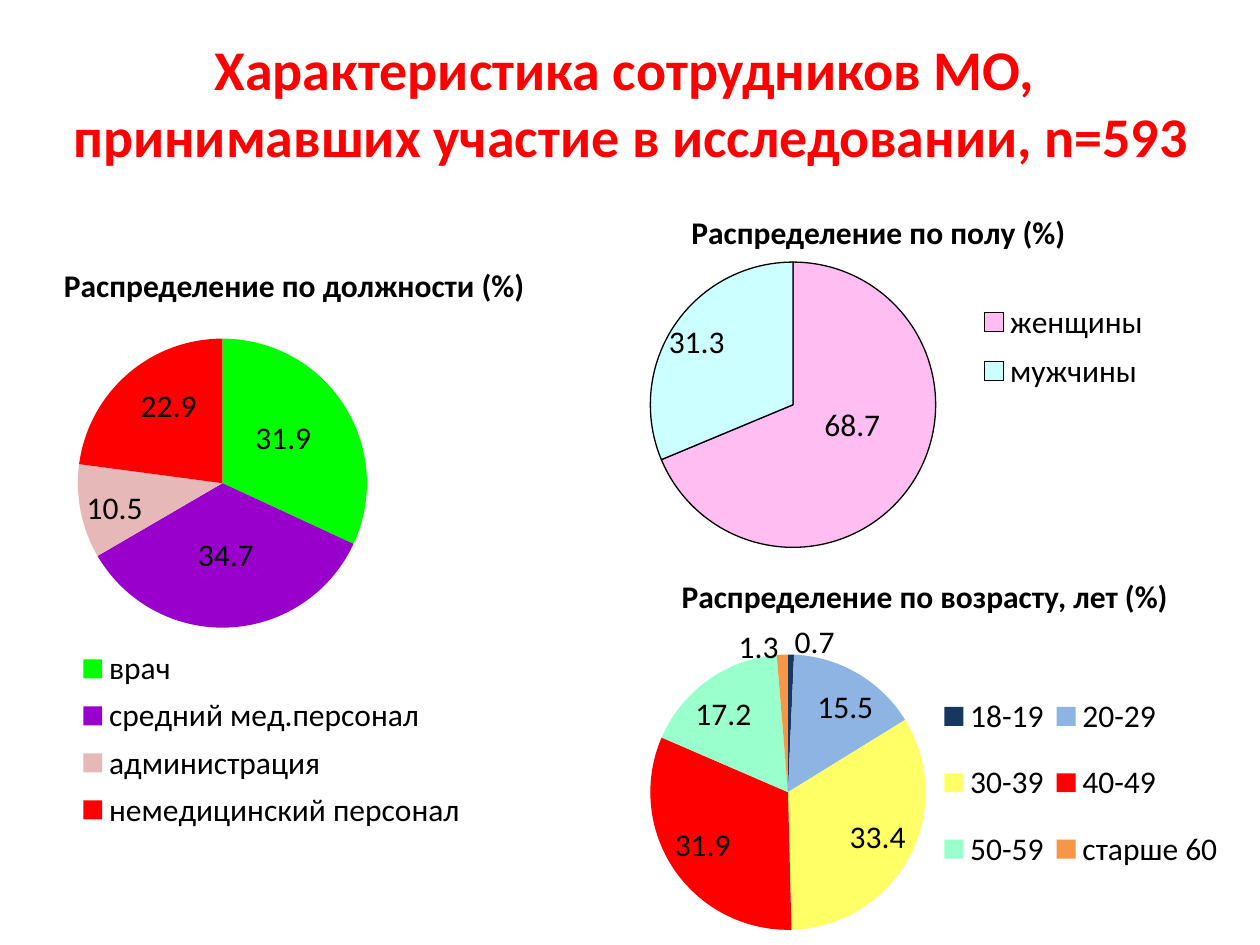
from lxml import etree
from pptx import Presentation
from pptx.chart.data import CategoryChartData
from pptx.dml.color import RGBColor
from pptx.enum import chart as ch, text
from pptx.util import Cm, Pt

FONT = "Calibri"
NS = "http://schemas.openxmlformats.org/drawingml/2006/chart"
BLACK = RGBColor(0x00, 0x00, 0x00)
RED = RGBColor(0xFF, 0x00, 0x00)
GREEN = RGBColor(0x00, 0xFF, 0x00)
PURPLE = RGBColor(0x99, 0x00, 0xCC)
ROSE = RGBColor(0xE6, 0xB9, 0xB8)
PINK = RGBColor(0xFF, 0xBD, 0xF2)
CYAN = RGBColor(0xCC, 0xFF, 0xFF)
NAVY = RGBColor(0x17, 0x37, 0x5E)
BLUE = RGBColor(0x8E, 0xB4, 0xE3)
YELLOW = RGBColor(0xFF, 0xFF, 0x66)
MINT = RGBColor(0x99, 0xFF, 0xCC)
ORANGE = RGBColor(0xF7, 0x96, 0x46)

prs = Presentation()
prs.slide_width, prs.slide_height = Cm(25.4), Cm(19.05)
s = prs.slides.add_slide(prs.slide_layouts[6])


def add_text(words, box, size=18, color=BLACK, wrap=True,
             align=text.PP_ALIGN.LEFT, anchor=text.MSO_ANCHOR.TOP):
    tf = s.shapes.add_textbox(*[Cm(v) for v in box]).text_frame
    tf.word_wrap = wrap
    tf.vertical_anchor = anchor
    p = tf.paragraphs[0]
    p.alignment = align
    for i, line in enumerate(words.split("\n")):
        if i:
            p.add_line_break()
        r = p.add_run()
        r.text = line
        r.font.name, r.font.size, r.font.bold = FONT, Pt(size), True
        r.font.color.rgb = color


def make_layout(**values):
    """Manual chart layout; values are fractions of the chart frame."""
    layout = etree.Element(f"{{{NS}}}layout")
    manual = etree.SubElement(layout, f"{{{NS}}}manualLayout")
    for tag, val in values.items():
        etree.SubElement(manual, f"{{{NS}}}{tag}").set("val", str(val))
    return layout


# Title and chart headings
add_text("Характеристика сотрудников МО, \nпринимавших участие в исследовании, n=593",
         (0.66, 0.46, 24.13, 3.18), size=32, color=RED,
         align=text.PP_ALIGN.CENTER, anchor=text.MSO_ANCHOR.MIDDLE)
add_text("Распределение по должности (%)", (1.04, 5.23, 22.86, 0.89))
add_text("Распределение по полу (%)", (13.69, 4.17, 8.1, 1.02), wrap=False)
add_text("Распределение по возрасту, лет (%)", (13.49, 11.51, 10.41, 1.02), wrap=False)

# Pies: slices are (category, value, colour), moved holds label offsets by slice
CENTER, BEST = ch.XL_LABEL_POSITION.CENTER, ch.XL_LABEL_POSITION.BEST_FIT
pies = [
    dict(box=(0.33, 5.77, 12.4, 11.35), plot=(0.1, 0.03, 0.47, 0.64),
         legend=(0.09, 0.63, 0.65, 0.35), pos=CENTER, outline=False,
         slices=[("врач", 31.9, GREEN), ("средний мед.персонал", 34.7, PURPLE),
                 ("администрация", 10.5, ROSE), ("немедицинский персонал", 22.9, RED)],
         moved={0: (0, -0.01), 2: (-0.06, 0.02), 3: (-0.01, -0.04)}),
    dict(box=(12.7, 4.83, 12.4, 7.57), plot=(0.03, 0.06, 0.47, 0.76),
         legend=(0.56, 0.14, 0.29, 0.29), pos=CENTER, outline=True,
         slices=[("женщины", 68.7, PINK), ("мужчины", 31.3, CYAN)],
         moved={0: (0, -0.05), 1: (-0.06, -0.06)}),
    dict(box=(13.11, 10.72, 11.81, 9.55), plot=(0, 0.23, 0.47, 0.64),
         legend=(0.48, 0.29, 0.51, 0.48), pos=BEST, outline=False,
         slices=[("18-19", 0.7, NAVY), ("20-29", 15.5, BLUE), ("30-39", 33.4, YELLOW),
                 ("40-49", 31.9, RED), ("50-59", 17.2, MINT), ("старше 60", 1.3, ORANGE)],
         moved={0: (0.04, 0.03), 5: (-0.04, 0.04)}),
]

for pie in pies:
    names, values, colors = zip(*pie["slices"])
    data = CategoryChartData(number_format="0.0")
    data.categories = names
    data.add_series("Series 1", values)
    chart = s.shapes.add_chart(ch.XL_CHART_TYPE.PIE,
                               *[Cm(v) for v in pie["box"]], data).chart
    chart.has_title = False
    chart.font.name, chart.font.size = FONT, Pt(18)
    chart.font.color.rgb = BLACK
    chart.plots[0].vary_by_categories = True
    ser = chart.plots[0].series[0]

    # Slice colours
    for i, color in enumerate(colors):
        fmt = ser.points[i].format
        fmt.fill.solid()
        fmt.fill.fore_color.rgb = color
        if pie["outline"]:
            fmt.line.color.rgb = BLACK
            fmt.line.width = Pt(0.75)
        else:
            fmt.line.fill.background()

    # Value labels
    labels = ser.data_labels
    labels.show_value = True
    labels.show_percentage = False
    labels.number_format, labels.number_format_is_linked = "0.0", False
    labels.position = pie["pos"]
    for i, (dx, dy) in pie["moved"].items():
        label = ser.points[i].data_label
        label.font.size = Pt(18)
        label.position = pie["pos"]
        idx = chart.element.xpath(f".//c:dLbl/c:idx[@val='{i}']")[0]
        idx.addnext(make_layout(x=dx, y=dy))
    for leader in chart.element.xpath(".//c:showLeaderLines"):
        leader.set("val", "0")

    # Legend and plot placement
    chart.has_legend = True
    chart.legend.position = ch.XL_LEGEND_POSITION.BOTTOM
    chart.legend.include_in_layout = False
    for old in chart.element.xpath(".//c:plotArea/c:layout | .//c:legend/c:layout"):
        old.getparent().remove(old)
    edges = dict(xMode="edge", yMode="edge")
    chart.element.xpath(".//c:legendPos")[0].addnext(
        make_layout(**edges, **dict(zip("xywh", pie["legend"]))))
    chart.element.xpath(".//c:plotArea")[0].insert(
        0, make_layout(layoutTarget="inner", **edges, **dict(zip("xywh", pie["plot"]))))

prs.save("out.pptx")
